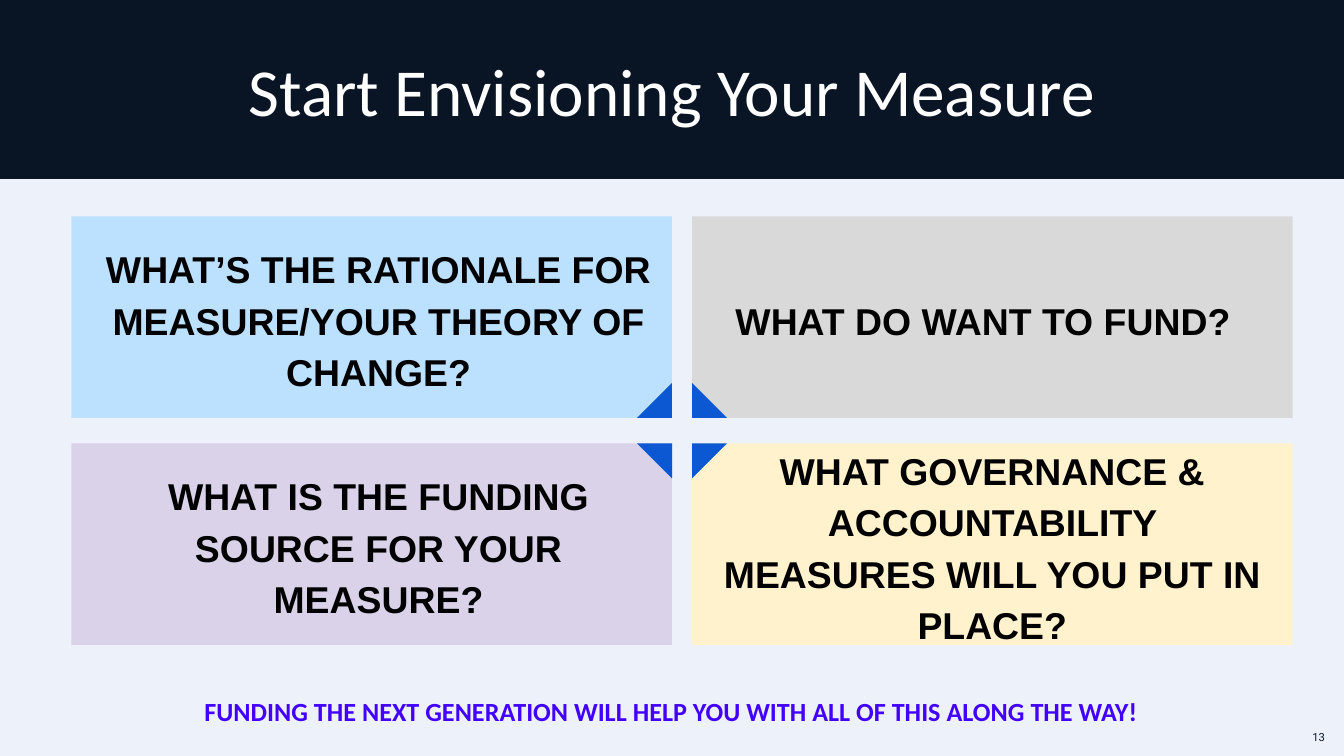
import dataclasses
import pptx
import pptx.dml.color
import pptx.enum.shapes
import pptx.enum.text
import pptx.util

Cm = pptx.util.Cm
Align = pptx.enum.text.PP_ALIGN
Anchor = pptx.enum.text.MSO_ANCHOR
Preset = pptx.enum.shapes.MSO_SHAPE

COLOURS = {
    "background": "EDF2FA",
    "navy": "091425",
    "white": "FFFFFF",
    "black": "000000",
    "corner": "0C58D3",
    "violet": "4100FF",
    "sky": "BBE1FF",
    "grey": "D9D9D9",
    "lilac": "D9D2E9",
    "cream": "FFF2CC",
}
COLUMNS = (1.35, 13.08)
ROWS = (4.09, 8.38)
CARD_WIDTH, CARD_HEIGHT = 11.35, 3.81
CORNER = 0.66
INSET = 0.25


@dataclasses.dataclass
class Question:
    text: str
    column: int
    row: int
    colour: str
    corner_rotation: int
    right_inset: float = INSET


@dataclasses.dataclass
class Style:
    font: str
    size: int
    colour: str
    bold: bool = False
    align: Align = Align.CENTER
    anchor: Anchor = Anchor.MIDDLE
    spacing: float = 1.0


QUESTIONS = [
    Question("WHAT’S THE RATIONALE FOR MEASURE/YOUR THEORY OF CHANGE?", 0, 0, "sky", 270),
    Question("WHAT DO WANT TO FUND?", 1, 0, "grey", 0, 0.86),
    Question("WHAT IS THE FUNDING SOURCE FOR YOUR MEASURE?", 0, 1, "lilac", 180),
    Question("WHAT GOVERNANCE & ACCOUNTABILITY MEASURES WILL YOU PUT IN PLACE?",
             1, 1, "cream", 90, 0.51),
]
QUESTION_STYLE = Style("Arial", 20, "black", bold=True, spacing=1.15)
TITLE_STYLE = Style("Calibri", 36, "white")
FOOTER_STYLE = Style("Calibri", 14, "violet", bold=True, anchor=Anchor.TOP)
NUMBER_STYLE = Style("Roboto", 6, "navy", align=Align.RIGHT)


def colour(name: str) -> pptx.dml.color.RGBColor:
    return pptx.dml.color.RGBColor.from_string(COLOURS[name])


def write(box, text: str, style: Style, left: float = INSET, right: float = INSET) -> None:
    frame = box.text_frame
    frame.text = text
    frame.word_wrap = True
    frame.auto_size = pptx.enum.text.MSO_AUTO_SIZE.NONE
    frame.vertical_anchor = style.anchor
    frame.margin_left, frame.margin_right = Cm(left), Cm(right)
    frame.margin_top = frame.margin_bottom = Cm(INSET)
    para = frame.paragraphs[0]
    para.alignment = style.align
    para.line_spacing = style.spacing
    for span in para.runs:
        span.font.name = style.font
        span.font.size = pptx.util.Pt(style.size)
        span.font.bold = style.bold
        span.font.color.rgb = colour(style.colour)


def add_filled(page, preset: Preset, left: float, top: float,
               width: float, height: float, fill: str):
    shape = page.shapes.add_shape(preset, Cm(left), Cm(top), Cm(width), Cm(height))
    shape.shadow.inherit = False
    shape.fill.solid()
    shape.fill.fore_color.rgb = colour(fill)
    shape.line.fill.background()
    return shape


def add_question(page, question: Question) -> None:
    left, top = COLUMNS[question.column], ROWS[question.row]
    card = add_filled(page, Preset.RECTANGLE, left, top, CARD_WIDTH, CARD_HEIGHT, question.colour)
    write(card, question.text, QUESTION_STYLE, left=0.51, right=question.right_inset)
    corner_left = left + (1 - question.column) * (CARD_WIDTH - CORNER)
    corner_top = top + (1 - question.row) * (CARD_HEIGHT - CORNER)
    corner = add_filled(page, Preset.RIGHT_TRIANGLE, corner_left, corner_top,
                        CORNER, CORNER, "corner")
    corner.rotation = question.corner_rotation


def add_text(page, text: str, left: float, top: float,
             width: float, height: float, style: Style) -> None:
    box = page.shapes.add_textbox(Cm(left), Cm(top), Cm(width), Cm(height))
    write(box, text, style)


def add_title(page, text: str) -> None:
    title = page.shapes.title
    title.left, title.top, title.width, title.height = Cm(0), Cm(0), Cm(25.4), Cm(3.38)
    title.fill.solid()
    title.fill.fore_color.rgb = colour("navy")
    write(title, text, TITLE_STYLE)


def main() -> None:
    deck = pptx.Presentation()
    deck.slide_width, deck.slide_height = Cm(25.4), Cm(14.29)
    page = deck.slides.add_slide(deck.slide_layouts[5])
    page.background.fill.solid()
    page.background.fill.fore_color.rgb = colour("background")
    add_title(page, "Start Envisioning Your Measure")
    for question in QUESTIONS:
        add_question(page, question)
    add_text(page, "FUNDING THE NEXT GENERATION WILL HELP YOU WITH ALL OF THIS ALONG THE WAY!",
             1.55, 12.9, 22.28, 1.37, FOOTER_STYLE)
    add_text(page, "13", 23.77, 13.39, 1.52, 1.09, NUMBER_STYLE)
    deck.save("out.pptx")


if __name__ == "__main__":
    main()
